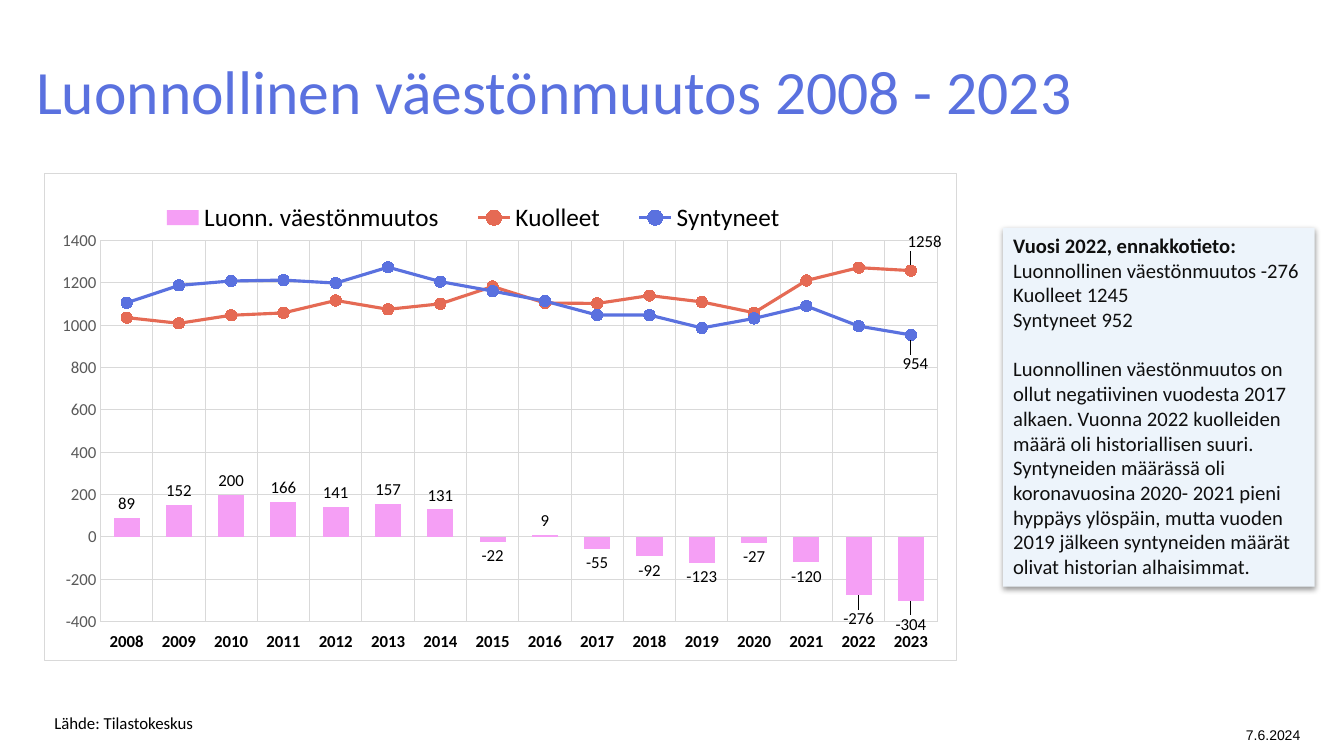
from lxml.etree import SubElement
from pptx import Presentation
from pptx.chart.data import CategoryChartData
from pptx.dml.color import RGBColor
from pptx.enum.chart import (XL_CHART_TYPE, XL_LABEL_POSITION, XL_LEGEND_POSITION,
                             XL_MARKER_STYLE, XL_TICK_LABEL_POSITION, XL_TICK_MARK)
from pptx.enum.shapes import MSO_SHAPE
from pptx.enum.text import MSO_ANCHOR, PP_ALIGN
from pptx.oxml import parse_xml
from pptx.oxml.ns import qn
from pptx.util import Inches, Pt

COLORS = {"blue": "5A71DF", "red": "E56A54", "pink": "F59FF5", "pale": "EDF4FB",
          "ink": "0F0F0F", "black": "000000", "grey": "595959", "rule": "D9D9D9"}
NS = ('xmlns:c="http://schemas.openxmlformats.org/drawingml/2006/chart" '
      'xmlns:a="http://schemas.openxmlformats.org/drawingml/2006/main"')
YEARS = [str(year) for year in range(2008, 2024)]
CHANGE = [89, 152, 200, 166, 141, 157, 131, -22, 9, -55, -92, -123, -27, -120, -276, -304]
DEATHS = [1036, 1009, 1047, 1058, 1117, 1075, 1101, 1183,
          1105, 1103, 1140, 1110, 1059, 1211, 1272, 1258]
BIRTHS = [1106, 1188, 1209, 1213, 1199, 1274, 1206, 1161,
          1114, 1048, 1048, 987, 1032, 1091, 996, 954]


def color(name):
    return RGBColor.from_string(COLORS[name])


def layout(x, y, w=None, h=None, inner=False):
    """Manual chart layout; without a size it is an offset."""
    parts = '<c:layoutTarget val="inner"/>' if inner else ""
    if w:
        parts += '<c:xMode val="edge"/><c:yMode val="edge"/>'
    for key, val in zip("xywh", (x, y, w, h)):
        if val is not None:
            parts += f'<c:{key} val="{val}"/>'
    return parse_xml(f"<c:layout {NS}><c:manualLayout>{parts}</c:manualLayout></c:layout>")


class Deck:
    def __init__(self):
        self.prs = Presentation()
        self.prs.slide_width, self.prs.slide_height = Inches(13.33), Inches(7.5)
        self.slide = self.prs.slides.add_slide(self.prs.slide_layouts[6])
        self.face = "Calibri"

    def font(self, font, size, hue, bold=False, face=None):
        font.name, font.size, font.bold = face or self.face, Pt(size), bold
        font.color.rgb = color(hue)

    def fill(self, frame, paras, size, hue, face=None):
        """Each paragraph is (lines, bold, space before)."""
        frame.word_wrap = True
        for i, (lines, bold, gap) in enumerate(paras):
            para = frame.paragraphs[0] if i == 0 else frame.add_paragraph()
            para.alignment = PP_ALIGN.LEFT
            if gap:
                para.space_before = Pt(gap)
            for j, line in enumerate(lines):
                if j:
                    para.add_line_break()
                run = para.add_run()
                run.text = line
                self.font(run.font, size, hue, bold, face)

    def text(self, spot, line, size, hue, face=None, anchor=MSO_ANCHOR.TOP):
        frame = self.slide.shapes.add_textbox(*map(Inches, spot)).text_frame
        frame.vertical_anchor = anchor
        self.fill(frame, [([line], False, 0)], size, hue, face)

    def panel(self, spot, paras):
        box = self.slide.shapes.add_shape(MSO_SHAPE.RECTANGLE, *map(Inches, spot))
        box.shadow.inherit = False
        box.fill.solid()
        box.fill.fore_color.rgb = color("pale")
        box.line.fill.background()
        glow = SubElement(box.element.spPr.find(qn("a:effectLst")), qn("a:outerShdw"),
                          blurRad=str(Pt(4)), dist=str(Pt(2)), dir="5400000",
                          algn="t", rotWithShape="0")
        tone = SubElement(glow, qn("a:srgbClr"), val=COLORS["black"])
        SubElement(tone, qn("a:alpha"), val="40000")
        box.text_frame.vertical_anchor = MSO_ANCHOR.TOP
        self.fill(box.text_frame, paras, 14.7, "ink")

    def axis(self, axis, hue, bold=False):
        axis.major_tick_mark = axis.minor_tick_mark = XL_TICK_MARK.NONE
        axis.has_major_gridlines = True
        for line in (axis.major_gridlines.format.line, axis.format.line):
            line.color.rgb, line.width = color("rule"), Pt(0.75)
        self.font(axis.tick_labels.font, 12, hue, bold)

    def label(self, series, index, place, x, y):
        label = series.points[index].data_label
        self.font(label.font, 12, "black")
        label.position = place
        mark = series.data_labels._element.findall(qn("c:dLbl"))[-1]
        mark.find(qn("c:idx")).addnext(layout(x, y))

    def split(self, chart):
        """Move all series but the first to a line plot on the same axes."""
        bar = chart.element.find(".//" + qn("c:barChart"))
        line = parse_xml(f'<c:lineChart {NS}><c:grouping val="standard"/>'
                         '<c:varyColors val="0"/></c:lineChart>')
        for ser in bar.findall(qn("c:ser"))[1:]:
            for flag in ser.findall(qn("c:invertIfNegative")):
                ser.remove(flag)
            line.append(ser)
        SubElement(line, qn("c:marker"), val="1")
        for axis in bar.findall(qn("c:axId")):
            SubElement(line, qn("c:axId"), val=axis.get("val"))
        bar.addnext(line)

    def trend(self, series, hue, place, x, y):
        series.smooth = False
        series.format.line.color.rgb, series.format.line.width = color(hue), Pt(2.25)
        series.marker.style, series.marker.size = XL_MARKER_STYLE.CIRCLE, 8
        series.marker.format.fill.solid()
        series.marker.format.fill.fore_color.rgb = color(hue)
        series.marker.format.line.color.rgb = color(hue)
        series.data_labels.show_value = False
        self.label(series, len(YEARS) - 1, place, x, y)
        # Leader line from the moved label to its point
        series.data_labels._element.append(parse_xml(
            f'<c:extLst {NS}><c:ext uri="{{CE6537A1-D6FC-4f65-9D91-7224C49458BB}}" '
            'xmlns:c15="http://schemas.microsoft.com/office/drawing/2012/chart">'
            '<c15:showLeaderLines val="1"/></c:ext></c:extLst>'))

    def chart(self, spot):
        data = CategoryChartData()
        data.categories = YEARS
        for name, vals in (("Luonn. väestönmuutos", CHANGE),
                           ("Kuolleet", DEATHS), ("Syntyneet", BIRTHS)):
            data.add_series(name, vals)
        chart = self.slide.shapes.add_chart(
            XL_CHART_TYPE.COLUMN_CLUSTERED, *map(Inches, spot), data).chart
        self.font(chart.font, 18, "black")
        chart.has_title = False
        self.split(chart)

        # Axes
        years, scale = chart.category_axis, chart.value_axis
        self.axis(years, "black", True)
        years.tick_label_position = XL_TICK_LABEL_POSITION.LOW
        self.axis(scale, "grey")
        scale.format.line.fill.background()
        scale.minimum_scale, scale.maximum_scale, scale.major_unit = -400, 1400, 200

        # Columns
        bars, lines = chart.plots
        bars.gap_width, bars.vary_by_categories = 101, False
        change = bars.series[0]
        change.invert_if_negative = False
        change.format.fill.solid()
        change.format.fill.fore_color.rgb = color("pink")
        labels = change.data_labels
        labels.show_value, labels.position = True, XL_LABEL_POSITION.OUTSIDE_END
        self.font(labels.font, 12, "black")
        for index in (14, 15):
            self.label(change, index, XL_LABEL_POSITION.OUTSIDE_END, 0, 0.02)

        # Lines
        deaths, births = lines.series
        self.trend(deaths, "red", XL_LABEL_POSITION.ABOVE, 0.015, -0.02)
        self.trend(births, "blue", XL_LABEL_POSITION.BELOW, 0.005, 0.02)

        # Legend, plot area and border
        chart.has_legend = True
        legend = chart.legend
        legend.position, legend.include_in_layout = XL_LEGEND_POSITION.TOP, False
        self.font(legend.font, 18, "black")
        for old in legend._element.findall(qn("c:layout")):
            legend._element.remove(old)
        legend._element.find(qn("c:legendPos")).addnext(layout(0.1, 0.05, 0.74, 0.08))
        area = chart.element.find(".//" + qn("c:plotArea"))
        for old in area.findall(qn("c:layout")):
            area.remove(old)
        area.insert(0, layout(0.061, 0.137, 0.918, 0.783, True))
        chart.element.find(qn("c:chart")).addnext(parse_xml(
            f'<c:spPr {NS}><a:noFill/><a:ln w="{Pt(0.75)}"><a:solidFill>'
            f'<a:srgbClr val="{COLORS["rule"]}"/></a:solidFill></a:ln></c:spPr>'))


def main():
    deck = Deck()
    # Title
    deck.text((0.26, 0.48, 10.76, 0.83), "Luonnollinen väestönmuutos 2008 - 2023",
              44, "blue", anchor=MSO_ANCHOR.MIDDLE)
    # Facts
    deck.panel((9.95, 2.26, 3.09, 3.56), [
        (["Vuosi 2022, ennakkotieto:"], True, 0),
        (["Luonnollinen väestönmuutos -276", "Kuolleet 1245", "Syntyneet 952"], False, 0),
        (["Luonnollinen väestönmuutos on ollut negatiivinen vuodesta 2017 alkaen. "
          "Vuonna 2022 kuolleiden määrä oli historiallisen suuri. Syntyneiden määrässä "
          "oli koronavuosina 2020- 2021 pieni hyppäys ylöspäin, mutta vuoden 2019 "
          "jälkeen syntyneiden määrät olivat historian alhaisimmat."], False, 17.6)])
    # Source and date
    deck.text((0.44, 7.02, 5.21, 0.38), "Lähde: Tilastokeskus", 12, "black")
    deck.text((12.26, 7.16, 1.07, 0.27), "7.6.2024", 10, "black", "Arial")
    # Chart
    deck.chart((0.44, 1.72, 9.05, 4.84))
    deck.prs.save("out.pptx")


if __name__ == "__main__":
    main()
